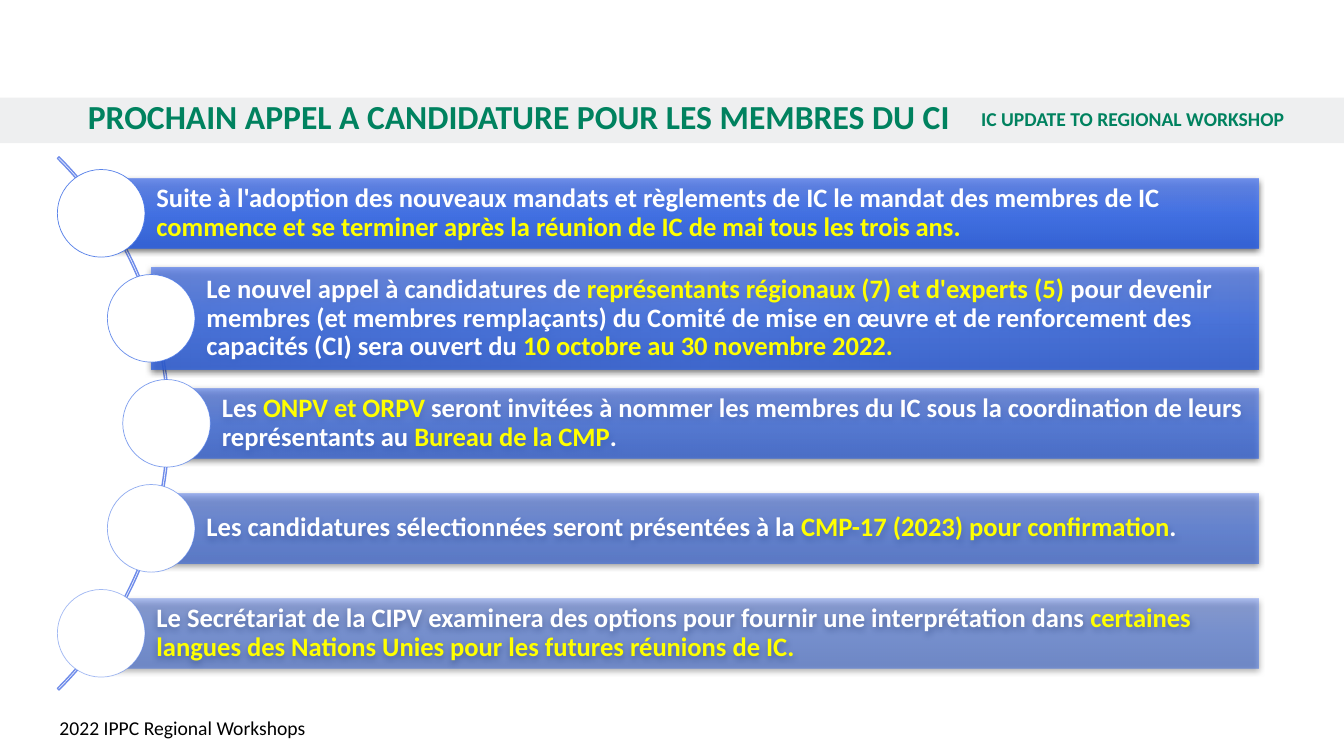
"""Build the slide on the next call for committee candidates."""
from dataclasses import dataclass

from pptx import Presentation
from pptx.dml.color import RGBColor
from pptx.enum.shapes import MSO_SHAPE as SHAPE
from pptx.enum.text import MSO_ANCHOR as ANCHOR, MSO_AUTO_SIZE as AUTO, PP_ALIGN as ALIGN
from pptx.oxml import parse_xml
from pptx.oxml.ns import nsdecls, qn
from pptx.util import Pt


@dataclass(frozen=True)
class Theme:
    """Hold the font, colours and type sizes."""
    font: str = "Calibri"
    green: str = "00825F"
    band: str = "D8D9DC"
    white: str = "FFFFFF"
    yellow: str = "FFFF00"
    black: str = "000000"
    arc: str = "6F8CEA"
    ring: str = "4775E7"
    gradient: tuple = ("6386EB", "3F72EF", "2F61DE")
    title: int = 24
    body: int = 19
    small: int = 14


T = Theme()
WIDTH, HEIGHT = 960, 540
BAR_RIGHT, FIRST_Y, PITCH, DISC = 898.6, 152.4, 75, 62.6

STEPS = [
    (72.3, 49.7, [
        "Suite à l'adoption des nouveaux mandats et règlements de IC le mandat des membres de IC ",
        "commence et se terminer après la réunion de IC de mai tous les trois ans."]),
    (108, 73, [
        "Le nouvel appel à candidatures de ",
        "représentants régionaux (7) et d'experts (5) ",
        "pour devenir membres (et membres remplaçants) du Comité de mise en œuvre "
        "et de renforcement des capacités (CI) sera ouvert du ",
        "10 octobre au 30 novembre 2022."]),
    (119, 49.7, [
        "Les ", "ONPV et ORPV ",
        "seront invitées à nommer les membres du IC sous la coordination de leurs représentants au ",
        "Bureau de la CMP", "."]),
    (108, 49.7, [
        "Les candidatures sélectionnées seront présentées à la ",
        "CMP-17 (2023) pour confirmation", "."]),
    (72.3, 49.7, [
        "Le Secrétariat de la CIPV examinera des options pour fournir une interprétation dans ",
        "certaines langues des Nations Unies pour les futures réunions de IC."]),
]


def add_alpha(fill_parent, percent):
    """Make the solid colour under an element partly transparent."""
    clr = next(fill_parent.iter(qn("a:srgbClr")))
    clr.append(parse_xml(f'<a:alpha {nsdecls("a")} val="{percent * 1000}"/>'))


def write(shape, texts, colors, size, bold=True, align=ALIGN.LEFT, anchor=ANCHOR.MIDDLE,
          insets=(42.5, 3.6, 42.5, 3.6)):
    """Write one paragraph whose runs cycle through the colours."""
    tf = shape.text_frame
    tf.word_wrap, tf.auto_size, tf.vertical_anchor = True, AUTO.NONE, anchor
    tf.margin_left, tf.margin_top, tf.margin_right, tf.margin_bottom = map(Pt, insets)
    p = tf.paragraphs[0]
    p.alignment, p.line_spacing, p.space_before = align, 0.9, Pt(0)
    for i, text in enumerate(texts):
        r = p.add_run()
        r.text = text
        r.font.name, r.font.size, r.font.bold = T.font, Pt(size), bold
        r.font.color.rgb = RGBColor.from_string(colors[i % len(colors)])


def add_shape(s, kind, box, fill=None, line=None, weight=1):
    """Add a preset shape with no shadow and the given fill and line."""
    sp = s.shapes.add_shape(kind, *map(Pt, box))
    sp.shadow.inherit = False
    if fill:
        sp.fill.solid()
        sp.fill.fore_color.rgb = RGBColor.from_string(fill)
    else:
        sp.fill.background()
    if line:
        sp.line.color.rgb = RGBColor.from_string(line)
        sp.line.width = Pt(weight)
    else:
        sp.line.fill.background()
    return sp


def add_bar(s, left, mid, height, percent, texts):
    """Add a shaded bar with its text."""
    sp = add_shape(s, SHAPE.RECTANGLE, (left, mid - height / 2, BAR_RIGHT - left, height))
    stops = "".join(
        f'<a:gs pos="{i * 50000}"><a:srgbClr val="{c}"><a:alpha val="{percent * 1000}"/></a:srgbClr></a:gs>'
        for i, c in enumerate(T.gradient))
    spPr = sp._element.spPr
    spPr.replace(spPr.find(qn("a:noFill")), parse_xml(
        f'<a:gradFill {nsdecls("a")} rotWithShape="1"><a:gsLst>{stops}</a:gsLst>'
        '<a:lin ang="5400000" scaled="0"/></a:gradFill>'))
    spPr.find(qn("a:effectLst")).append(parse_xml(
        f'<a:outerShdw {nsdecls("a")} blurRad="{Pt(4.5)}" dist="{Pt(1.5)}" dir="5400000" '
        f'algn="ctr" rotWithShape="0"><a:srgbClr val="{T.black}"><a:alpha val="63000"/>'
        '</a:srgbClr></a:outerShdw>'))
    write(sp, texts, (T.white, T.yellow), T.body, insets=(39.5, 3.6, 3.6, 3.6))


def add_disc(s, x, y, percent):
    """Add a white disc centred on a point."""
    sp = add_shape(s, SHAPE.OVAL, (x - DISC / 2, y - DISC / 2, DISC, DISC), T.white, T.ring, 0.5)
    add_alpha(sp.line._ln, percent)


def add_arc(s):
    """Add the thin arc that links the discs."""
    sp = add_shape(s, SHAPE.BLOCK_ARC, (-417.6, 33.1, 538.6, 538.6), line=T.arc)
    for i, value in enumerate((189, 27, 0.003)):
        sp.adjustments[i] = value


def add_frame(s):
    """Add the footer, the header band and the title."""
    footer = s.shapes.add_textbox(Pt(0), Pt(508.3), Pt(WIDTH), Pt(25.2))
    write(footer, ["2022 IPPC Regional Workshops"], [T.black], T.small, bold=False)
    band = add_shape(s, SHAPE.RECTANGLE, (0, 69.8, WIDTH, 32.4), T.band)
    add_alpha(band._element.spPr, 42)
    write(band, ["IC UPDATE TO REGIONAL WORKSHOP"], [T.green], T.small, align=ALIGN.RIGHT)
    title = s.shapes.title
    title.left, title.top, title.width, title.height = map(Pt, (20.2, 72, 704.2, 23))
    write(title, ["PROCHAIN APPEL A CANDIDATURE POUR LES MEMBRES DU CI"], [T.green], T.title,
          anchor=ANCHOR.TOP, insets=(42.5, 0, 28, 3.6))
    s.shapes._spTree.append(title._element)


def main():
    """Build and save the slide."""
    prs = Presentation()
    prs.slide_width, prs.slide_height = Pt(WIDTH), Pt(HEIGHT)
    s = prs.slides.add_slide(prs.slide_layouts[5])
    add_frame(s)
    add_arc(s)
    for i, (left, height, texts) in enumerate(STEPS):
        mid, percent = FIRST_Y + i * PITCH, 90 - 10 * i
        add_bar(s, left, mid, height, percent, texts)
        add_disc(s, left, mid, percent)
    prs.save("out.pptx")


if __name__ == "__main__":
    main()
